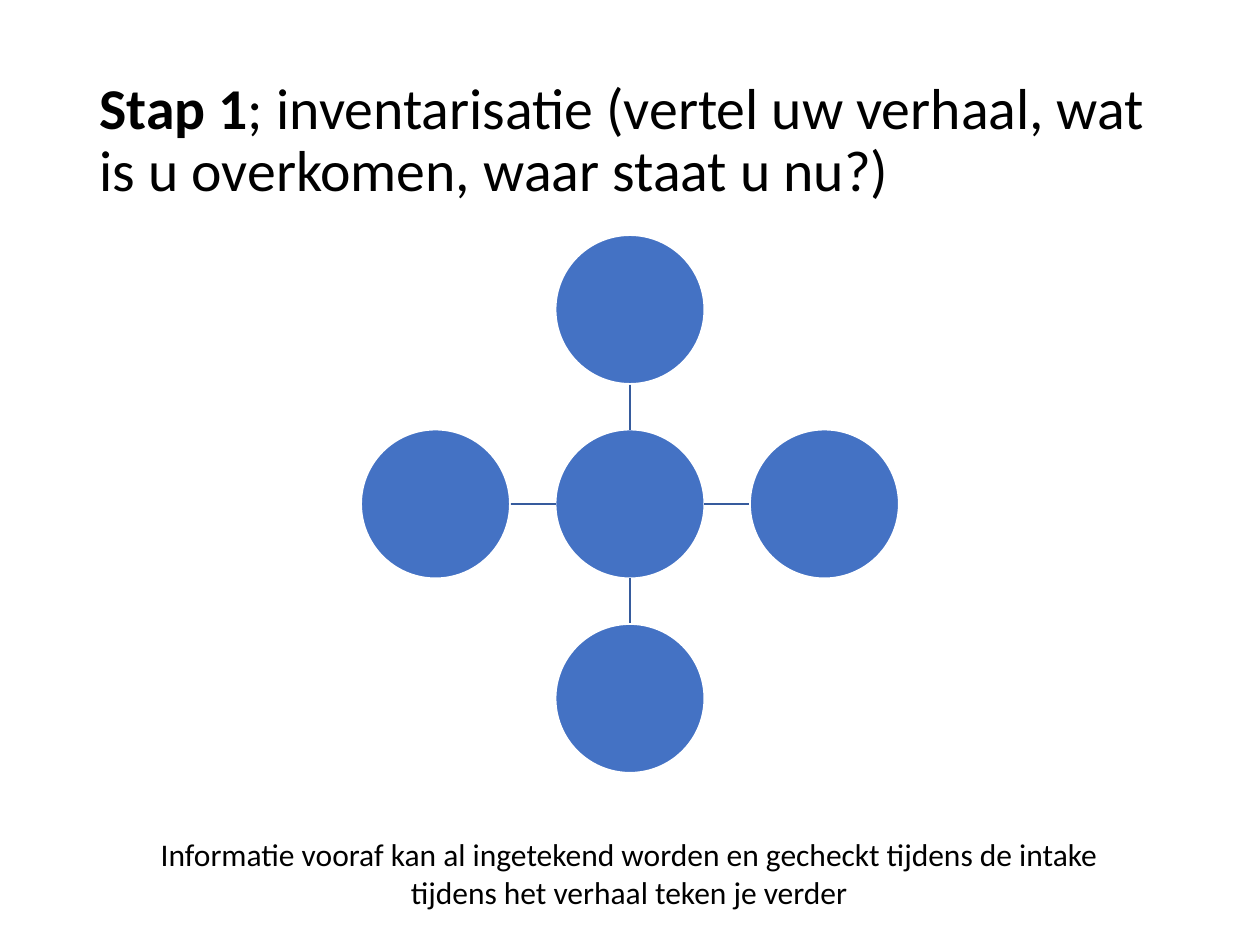
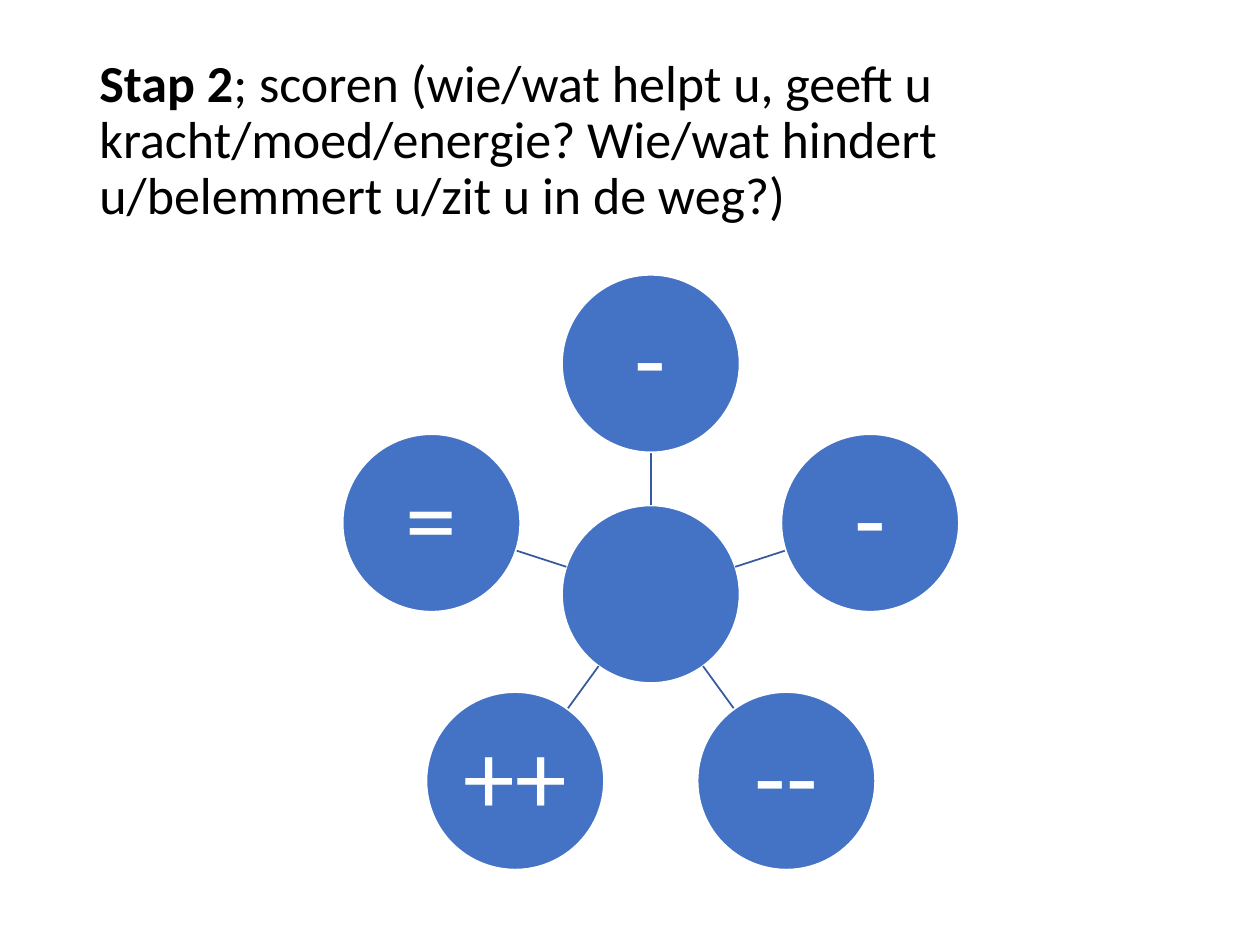
from math import cos, radians, sin

from lxml import etree
from pptx import Presentation
from pptx.dml.color import RGBColor
from pptx.enum.shapes import MSO_CONNECTOR, MSO_SHAPE
from pptx.enum.text import MSO_ANCHOR, MSO_AUTO_SIZE, PP_ALIGN
from pptx.oxml.ns import qn
from pptx.util import Cm, Pt

LEFT, CENTER = PP_ALIGN.LEFT, PP_ALIGN.CENTER
MIDDLE = MSO_ANCHOR.MIDDLE
NO_AUTOFIT = MSO_AUTO_SIZE.NONE
ELLIPSE = MSO_SHAPE.OVAL
STRAIGHT = MSO_CONNECTOR.STRAIGHT

FONT = "Calibri"
BLACK, WHITE, BLUE, DARK_BLUE = "000000", "FFFFFF", "4472C4", "365B9D"
TITLE_ONLY = 5
TITLE_AREA = (1.75, 1.02, 21.9, 3.68)
CAPTION_AREA = (2.31, 16.71, 20.75, 1.8)

# Lengths are in centimetres; satellites run clockwise from the top.
STEPS = [
    {
        "step": "Stap 1",
        "question": "; inventarisatie (vertel uw verhaal, wat is u overkomen, "
                    "waar staat u nu?)",
        "title_size": 33,
        "center": (12.7, 10.16),
        "distance": 3.92,
        "diameter": 3,
        "satellites": ["", "", "", ""],
        "caption": "Informatie vooraf kan al ingetekend worden en gecheckt "
                   "tijdens de intake tijdens het verhaal teken je verder",
    },
    {
        "step": "Stap 2",
        "question": "; scoren (wie/wat helpt u, geeft u kracht/moed/energie? "
                    "Wie/wat hindert u/belemmert u/zit u in de weg?)",
        "title_size": 29.7,
        "center": (13.12, 11.98),
        "distance": 4.65,
        "diameter": 3.58,
        "satellites": ["-", "-", "--", "++", "="],
        "caption": "",
    },
]


def color(hex_code):
    return RGBColor.from_string(hex_code)


def add_span(para, text, size, hex_code=BLACK, bold=False):
    span = para.add_run()
    span.text = text
    span.font.name = FONT
    span.font.size = Pt(size)
    span.font.bold = bold
    span.font.color.rgb = color(hex_code)


def add_title(page, step, question, size):
    title = page.shapes.title
    title.left, title.top, title.width, title.height = map(Cm, TITLE_AREA)
    frame = title.text_frame
    frame.auto_size = NO_AUTOFIT
    frame.vertical_anchor = MIDDLE
    para = frame.paragraphs[0]
    para.alignment = LEFT
    para.line_spacing = 0.9
    add_span(para, step, size, bold=True)
    add_span(para, question, size)


def add_caption(page, text):
    box = page.shapes.add_textbox(*map(Cm, CAPTION_AREA))
    box.text_frame.word_wrap = True
    para = box.text_frame.paragraphs[0]
    para.alignment = CENTER
    add_span(para, text, 18)


def add_circle(page, center, diameter, text=""):
    x, y = center
    circle = page.shapes.add_shape(ELLIPSE, Cm(x - diameter / 2), Cm(y - diameter / 2),
                                   Cm(diameter), Cm(diameter))
    circle.shadow.inherit = False
    circle.fill.solid()
    circle.fill.fore_color.rgb = color(BLUE)
    circle.line.color.rgb = color(WHITE)
    circle.line.width = Pt(1)
    if text:
        frame = circle.text_frame
        frame.margin_left = frame.margin_right = Cm(0.1)
        frame.margin_top = frame.margin_bottom = Cm(0.1)
        frame.vertical_anchor = MIDDLE
        para = frame.paragraphs[0]
        para.alignment = CENTER
        para.line_spacing = 0.9
        add_span(para, text, 59, WHITE)


def add_spoke(page, start, end):
    spoke = page.shapes.add_connector(STRAIGHT, *map(Cm, start + end))
    spoke.line.color.rgb = color(DARK_BLUE)
    spoke.line.width = Pt(1)
    etree.SubElement(spoke._element.spPr, qn("a:effectLst"))


def add_wheel(page, center, distance, diameter, satellites):
    """Draw a hub with satellites spaced evenly around it."""

    def point(angle, radius):
        return center[0] + radius * sin(angle), center[1] - radius * cos(angle)

    add_circle(page, center, diameter)
    for index, text in enumerate(satellites):
        angle = radians(360 / len(satellites) * index)
        add_spoke(page, point(angle, diameter / 2), point(angle, distance - diameter / 2))
        add_circle(page, point(angle, distance), diameter, text)


def main():
    deck = Presentation()
    deck.slide_width, deck.slide_height = Cm(25.4), Cm(19.05)
    for step in STEPS:
        page = deck.slides.add_slide(deck.slide_layouts[TITLE_ONLY])
        add_title(page, step["step"], step["question"], step["title_size"])
        add_wheel(page, step["center"], step["distance"], step["diameter"],
                  step["satellites"])
        if step["caption"]:
            add_caption(page, step["caption"])
    deck.save("out.pptx")


if __name__ == "__main__":
    main()
